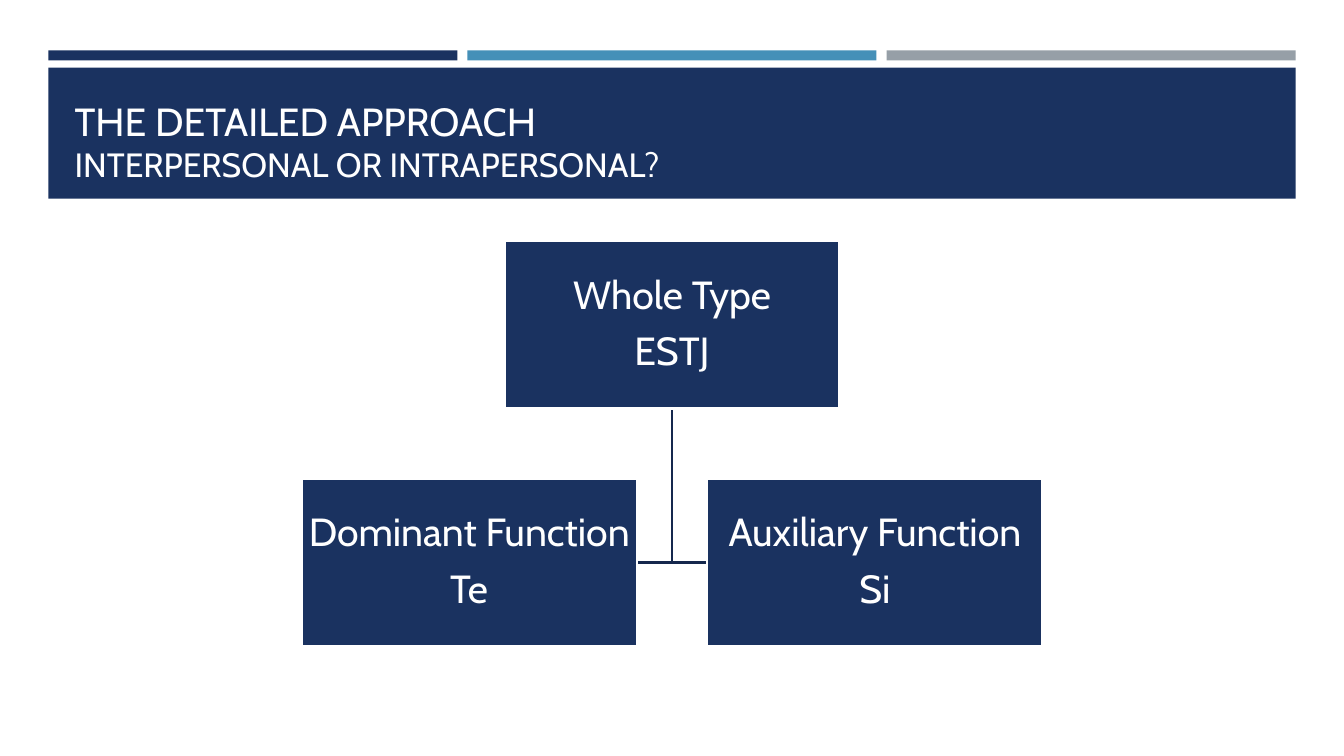
from pptx import Presentation
from pptx.dml.color import RGBColor
from pptx.enum.shapes import MSO_SHAPE as Kind
from pptx.enum.text import MSO_ANCHOR as Anchor, MSO_AUTO_SIZE as Fit, PP_ALIGN as Align
from pptx.util import Inches, Pt

NAVY = RGBColor(0x1A, 0x32, 0x60)
BLUE = RGBColor(0x45, 0x90, 0xB8)
GRAY = RGBColor(0x96, 0x9F, 0xA7)
INK = RGBColor(0x15, 0x28, 0x4D)
WHITE = RGBColor(0xFF, 0xFF, 0xFF)
FONT = "Cabin"
EDGE = 1.75


def write(para, text, size=28, color=WHITE):
    """Add one formatted run to a paragraph."""
    run = para.add_run()
    run.text = text
    run.font.name = FONT
    run.font.size = Pt(size)
    run.font.color.rgb = color


def block(slide, x, y, w, h, fill, line=None):
    """Draw a filled rectangle, with an outline if a line colour is given."""
    rect = slide.shapes.add_shape(Kind.RECTANGLE, *map(Inches, (x, y, w, h)))
    rect.shadow.inherit = False
    rect.fill.solid()
    rect.fill.fore_color.rgb = fill
    if line is None:
        rect.line.fill.background()
    else:
        rect.line.color.rgb = line
        rect.line.width = Pt(EDGE)
    return rect


def header(slide, x, y, w, h):
    """Place three accent bars over a banner that holds the title."""
    gap = 0.1
    bar = (w - 2 * gap) / 3
    for col, color in enumerate((NAVY, BLUE, GRAY)):
        block(slide, x + col * (bar + gap), y, bar, gap, color)
    top = y + 0.17
    tall = h - 0.17
    block(slide, x, top, w, tall, NAVY)

    title = slide.shapes.title
    slide.shapes._spTree.append(title._element)
    title.left, title.top = Inches(x + 0.16), Inches(top + 0.1)
    title.width, title.height = Inches(w - 0.32), Inches(tall - 0.19)
    frame = title.text_frame
    frame.auto_size = Fit.NONE
    frame.word_wrap = True
    frame.vertical_anchor = Anchor.BOTTOM
    para = frame.paragraphs[0]
    para.alignment = Align.LEFT
    write(para, "THE DETAILED APPROACH")
    para.add_line_break()
    write(para, "INTERPERSONAL OR INTRAPERSONAL?", size=24)


def node(slide, x, y, w, h, lines):
    """Draw one box of the tree with its centred lines."""
    frame = block(slide, x, y, w, h, NAVY, line=WHITE).text_frame
    frame.word_wrap = True
    frame.vertical_anchor = Anchor.MIDDLE
    frame.margin_left = frame.margin_right = Inches(0.02)
    frame.margin_top = frame.margin_bottom = Inches(0.02)
    for row, text in enumerate(lines):
        para = frame.add_paragraph() if row else frame.paragraphs[0]
        para.alignment = Align.CENTER
        para.line_spacing = 0.9
        para.space_after = Pt(9.8)
        write(para, text)


def elbow(slide, x, y, end, low):
    """Draw a line down from a point and then across to a side."""
    pen = slide.shapes.build_freeform(Inches(x), Inches(y))
    pen.add_line_segments([(Inches(x), Inches(low)), (Inches(end), Inches(low))], close=False)
    path = pen.convert_to_shape()
    path.shadow.inherit = False
    path.fill.background()
    path.line.color.rgb = INK
    path.line.width = Pt(EDGE)


def tree(slide, x, y, w, h, root, kids):
    """Place a root box above two child boxes and join them."""
    share = 0.21
    wide = w / (2 + share)
    tall = wide / 2
    mid, low = x + w / 2, y + h - tall
    gap = wide * share
    for end in (mid + gap / 2, mid - gap / 2):
        elbow(slide, mid, y + tall, end, low + tall / 2)
    node(slide, mid - wide / 2, y, wide, tall, root)
    for col, lines in enumerate(kids):
        node(slide, x + col * (wide + gap), low, wide, tall, lines)


def main():
    """Build and save the slide."""
    deck = Presentation()
    deck.slide_width, deck.slide_height = Inches(13.33), Inches(7.5)
    slide = deck.slides.add_slide(deck.slide_layouts[5])
    header(slide, 0.48, 0.5, 12.37, 1.47)
    tree(slide, 2.99, 2.39, 7.35, 4.02,
         ("Whole Type", "ESTJ"),
         (("Dominant Function", "Te"), ("Auxiliary Function", "Si")))
    deck.save("out.pptx")


if __name__ == "__main__":
    main()
